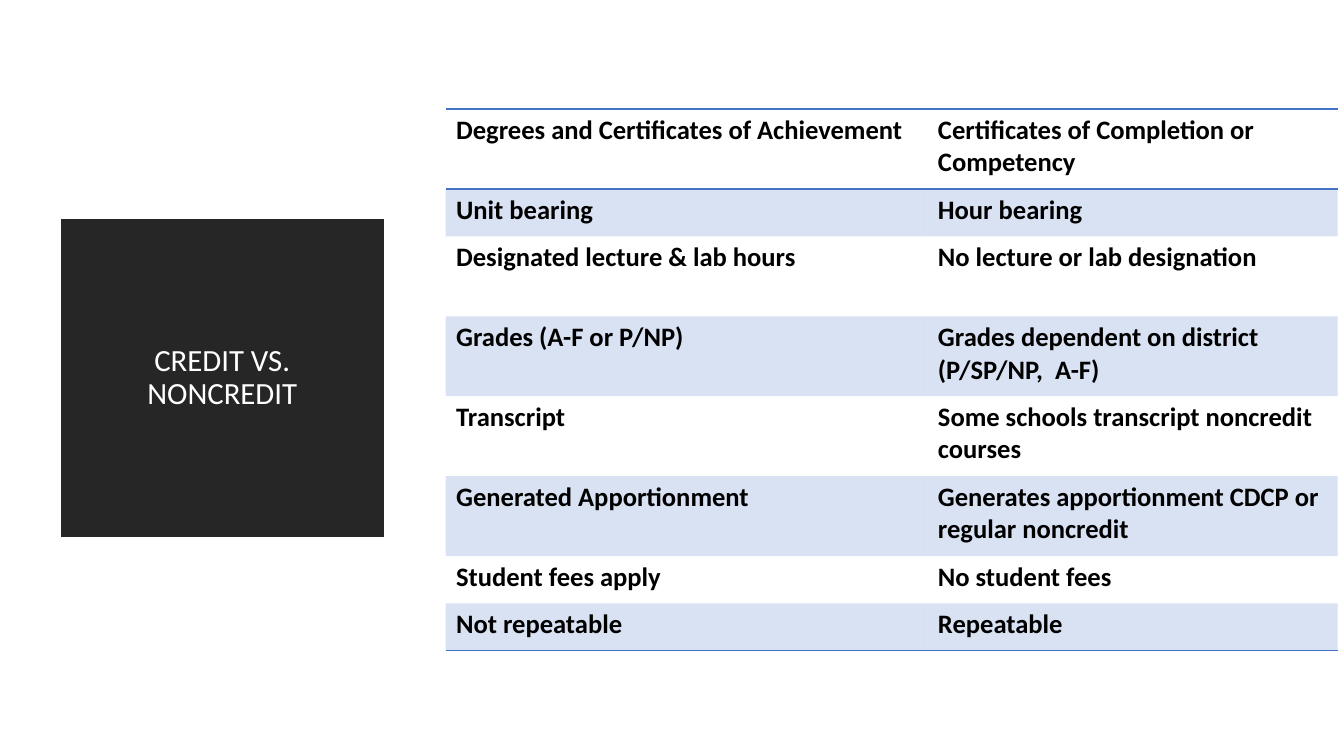
import pptx
import pptx.dml.color
import pptx.enum.text
import pptx.oxml.ns
import pptx.util
from lxml import etree

Pt = pptx.util.Pt
RGBColor = pptx.dml.color.RGBColor
qn = pptx.oxml.ns.qn

HEADING = "CREDIT VS. NONCREDIT"
COMPARISON = [
    ("Degrees and Certificates of Achievement", "Certificates of Completion or Competency"),
    ("Unit bearing", "Hour bearing"),
    ("Designated lecture & lab hours", "No lecture or lab designation"),
    ("Grades (A-F or P/NP)", "Grades dependent on district (P/SP/NP,  A-F)"),
    ("Transcript", "Some schools transcript noncredit courses"),
    ("Generated Apportionment", "Generates apportionment CDCP or regular noncredit"),
    ("Student fees apply", "No student fees"),
    ("Not repeatable", "Repeatable"),
]

BLACK = RGBColor(0x00, 0x00, 0x00)
WHITE = RGBColor(0xFF, 0xFF, 0xFF)
CHARCOAL = RGBColor(0x26, 0x26, 0x26)
BLUE = RGBColor(0x44, 0x72, 0xC4)

SINGLE, DOUBLE = 33.84, 57.09
ROW_HEIGHTS = [DOUBLE, SINGLE, DOUBLE, DOUBLE, DOUBLE, DOUBLE, SINGLE, SINGLE]
COLUMN_WIDTHS = [344.16, 293.04]
TABLE_LEFT, TABLE_TOP = 318.24, 77.9
NO_STYLE = "{2D5ABB26-0587-4C30-8999-92F81FD0307C}"

HEADING_FONT = {"name": "Calibri", "size": Pt(22), "bold": False}
CELL_FONT = {"name": "Calibri", "size": Pt(19), "bold": True}
HEADING_BOX = {"left": Pt(50.4), "top": Pt(163.44), "width": Pt(216.72), "height": Pt(213.12)}
HEADING_FRAME = {
    "margin_left": Pt(20), "margin_right": Pt(20),
    "word_wrap": True,
    "auto_size": pptx.enum.text.MSO_AUTO_SIZE.NONE,
    "vertical_anchor": pptx.enum.text.MSO_ANCHOR.MIDDLE,
}
CELL_MARGINS = {
    "margin_left": Pt(7.6), "margin_right": Pt(7.6),
    "margin_top": Pt(3.8), "margin_bottom": Pt(3.8),
}


def apply(target, values):
    for attribute, value in values.items():
        setattr(target, attribute, value)


def set_font(font, values, color):
    apply(font, values)
    font.color.rgb = color


def add_rule(cell, side):
    """Draw a 1 pt blue border on the side lnT or lnB of a cell."""
    rule = etree.SubElement(cell._tc.get_or_add_tcPr(), qn(f"a:{side}"), w=str(Pt(1)))
    fill = etree.SubElement(rule, qn("a:solidFill"))
    etree.SubElement(fill, qn("a:srgbClr"), val=str(BLUE))


def tint(cell):
    """Fill a cell with blue at 20 % opacity."""
    cell.fill.solid()
    cell.fill.fore_color.rgb = BLUE
    color = cell._tc.tcPr.find(f"{qn('a:solidFill')}/{qn('a:srgbClr')}")
    etree.SubElement(color, qn("a:alpha"), val="20000")


def add_heading(slide):
    heading = slide.shapes.title
    apply(heading, HEADING_BOX)
    heading.fill.solid()
    heading.fill.fore_color.rgb = CHARCOAL
    heading.line.color.rgb = CHARCOAL
    heading.line.width = Pt(13.75)
    outline = heading._element.spPr.find(qn("a:ln"))
    etree.SubElement(outline, qn("a:miter"), lim="800000")

    apply(heading.text_frame, HEADING_FRAME)
    heading.text_frame.text = HEADING
    paragraph = heading.text_frame.paragraphs[0]
    paragraph.alignment = pptx.enum.text.PP_ALIGN.CENTER
    paragraph.line_spacing = 0.9
    set_font(paragraph.runs[0].font, HEADING_FONT, WHITE)


def add_comparison(slide):
    table = slide.shapes.add_table(
        len(COMPARISON), len(COLUMN_WIDTHS), Pt(TABLE_LEFT), Pt(TABLE_TOP),
        Pt(sum(COLUMN_WIDTHS)), Pt(sum(ROW_HEIGHTS))).table
    apply(table, {"first_row": False, "horz_banding": False})
    table._tbl.tblPr.find(qn("a:tableStyleId")).text = NO_STYLE
    for column, width in zip(table.columns, COLUMN_WIDTHS):
        column.width = Pt(width)

    last = len(COMPARISON) - 1
    for r, (row, height, texts) in enumerate(zip(table.rows, ROW_HEIGHTS, COMPARISON)):
        row.height = Pt(height)
        for cell, text in zip(row.cells, texts):
            apply(cell, CELL_MARGINS)
            cell.text = text
            set_font(cell.text_frame.paragraphs[0].runs[0].font, CELL_FONT, BLACK)
            if r == 0:
                add_rule(cell, "lnT")
            if r in (0, last):
                add_rule(cell, "lnB")
            if r % 2:
                tint(cell)
            else:
                cell.fill.background()


def main():
    deck = pptx.Presentation()
    apply(deck, {"slide_width": Pt(960), "slide_height": Pt(540)})
    slide = deck.slides.add_slide(deck.slide_layouts.get_by_name("Title Only"))
    add_heading(slide)
    add_comparison(slide)
    deck.save("out.pptx")


if __name__ == "__main__":
    main()
